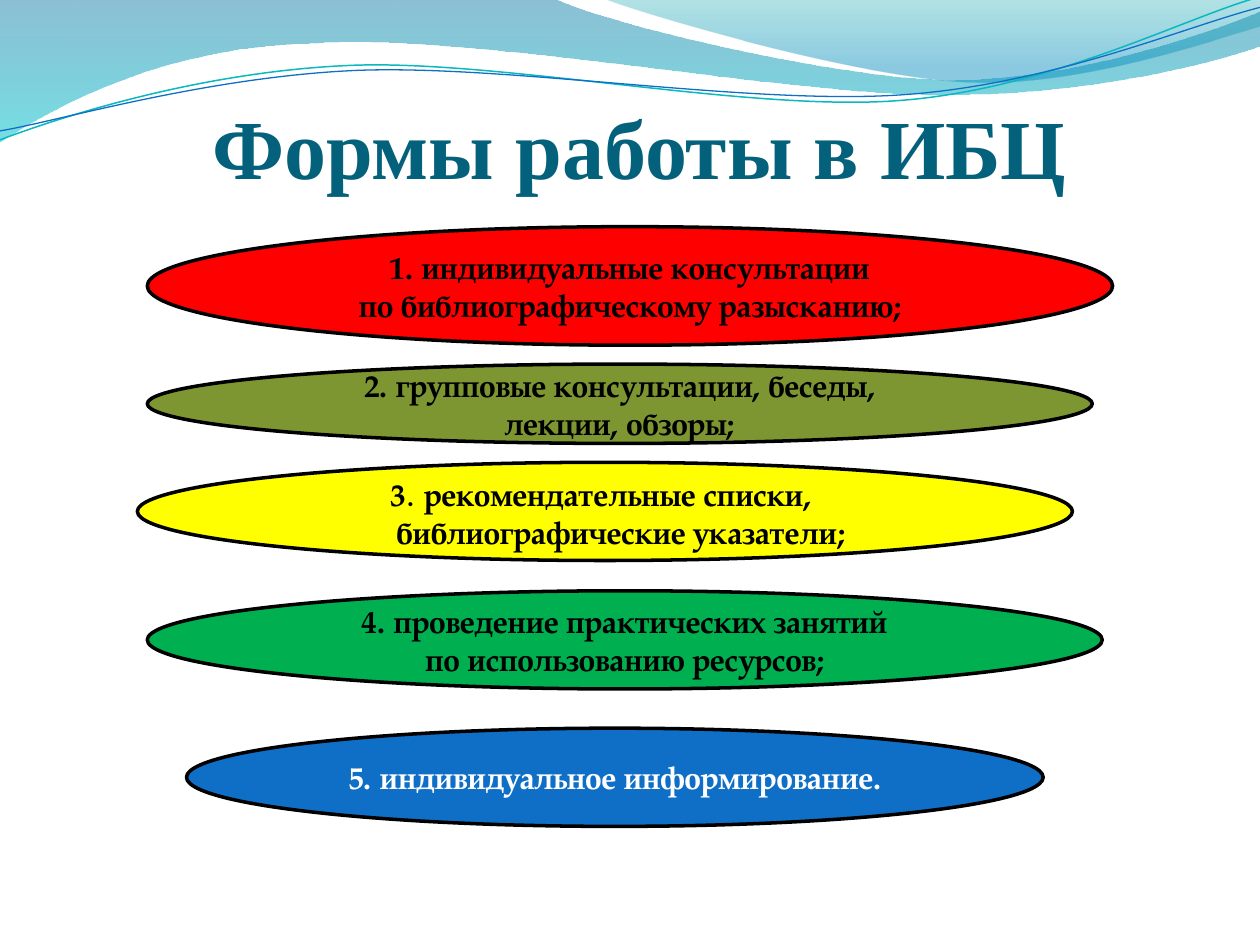
from pptx import Presentation
from pptx.dml.color import RGBColor
from pptx.enum.shapes import MSO_SHAPE
from pptx.enum.text import MSO_ANCHOR, MSO_AUTO_SIZE, PP_ALIGN
from pptx.util import Cm, Pt
from lxml.etree import SubElement
from pptx.oxml.ns import qn

HUE = {
    "title": "04617B", "black": "000000", "white": "FFFFFF",
    "red": "FF0000", "olive": "7E9632", "yellow": "FFFF00",
    "green": "00B050", "blue": "0F6FC6", "cyan": "0AB8BF",
    "deep": "0074A1", "aqua": "00C6CF", "teal": "00A1A9", "sky": "008BBF",
}
FONT = "TeX Gyre Pagella"

# Outlines in cm: a pair is a line end, six numbers are a Bezier curve.
BAND = [
    (0, 0), (11.18, -0.03),
    (12.09, 0.43, 16.87, 1.6, 19.25, 1.6),
    (21.67, 1.6, 24.33, 0.66, 25.4, 0.23),
    (25.43, 0.91),
    (24.97, 1.12, 22.1, 1.93, 18.95, 1.91),
    (15.8, 1.91, 9.7, 0.71, 6.53, 0.86),
    (3.28, 0.91, 1.17, 2.11, -0.03, 2.87),
    (0, 0),
]
CREST = [
    (12.17, -0.03),
    (12.93, 0.28, 17.32, 1.57, 19.53, 1.65),
    (21.74, 1.75, 24.41, 0.81, 25.4, 0.53),
    (25.4, 0), (12.17, -0.03),
]
CYAN_LINE = [
    (0, 2.82),
    (1.22, 2.36, 4.01, 1.45, 7.04, 1.32),
    (10.03, 1.19, 15.06, 2.26, 18.11, 2.03),
    (21.16, 1.8, 23.83, 0.38, 25.35, -0.05),
]
BLUE_LINE = [
    (0, 2.64),
    (1.19, 2.44, 4.17, 1.55, 7.19, 1.42),
    (10.24, 1.3, 15.16, 2.13, 18.21, 1.91),
    (21.23, 1.7, 23.9, 0.53, 25.4, 0.15),
]

# Box in cm, fill, text colour, lines
FORMS = [
    ((2.97, 4.57, 19.46, 2.39), "red", "black",
     "1. индивидуальные консультации\nпо библиографическому разысканию;"),
    ((2.97, 7.34, 19.05, 1.6), "olive", "black",
     "2. групповые консультации, беседы,\nлекции, обзоры;"),
    ((2.77, 9.32, 18.85, 1.98), "yellow", "black",
     "3\nбиблиографические указатели;"),
    ((2.97, 11.91, 19.25, 1.98), "green", "black",
     "4. проведение практических занятий\nпо использованию ресурсов;"),
    ((3.76, 14.68, 17.27, 1.98), "blue", "white",
     "5. индивидуальное информирование."),
]


def rgb(name):
    return RGBColor.from_string(HUE[name])


def add_path(slide, path, close):
    """Join the end points by lines, then bend those that are curves."""
    ends = [(Cm(part[-2]), Cm(part[-1])) for part in path]
    pen = slide.shapes.build_freeform(*ends[0])
    pen.add_line_segments(ends[1:], close=close)
    shape = pen.convert_to_shape()
    shape.shadow.inherit = False
    lines = list(shape.element.spPr.iter(qn("a:lnTo")))
    for line, part in zip(lines, path[1:]):
        if len(part) == 6:
            line.tag = qn("a:cubicBezTo")
            line.clear()
            for x, y in zip(part[::2], part[1::2]):
                knot = SubElement(line, qn("a:pt"))
                knot.set("x", str(Cm(x) - shape.left))
                knot.set("y", str(Cm(y) - shape.top))
    return shape


def add_wave(slide, path, stops):
    """Stops hold position, colour and opacity in percent."""
    wave = add_path(slide, path, True)
    wave.line.fill.background()
    wave.fill.gradient()
    wave.fill.gradient_angle = 270
    for stop, (pos, name, _) in zip(wave.fill.gradient_stops, stops):
        stop.position = pos
        stop.color.rgb = rgb(name)
    tints = wave.element.spPr.iter(qn("a:srgbClr"))
    for tint, (_, _, share) in zip(tints, stops):
        SubElement(tint, qn("a:alpha")).set("val", str(share * 1000))


def add_curve(slide, path, name, width):
    curve = add_path(slide, path, False)
    curve.fill.background()
    curve.line.color.rgb = rgb(name)
    curve.line.width = Pt(width)


def style(run, font, size, name, bold=True):
    run.font.name = font
    run.font.size = Pt(size)
    run.font.bold = bold
    run.font.color.rgb = rgb(name)


def set_title(slide, text):
    title = slide.shapes.title
    slide.shapes.element.append(title.element)  # in front of the waves
    title.left, title.top, title.width, title.height = map(
        Cm, (1.27, 0.58, 22.86, 3.38))
    frame = title.text_frame
    frame.text = text
    frame.auto_size = MSO_AUTO_SIZE.NONE
    frame.vertical_anchor = MSO_ANCHOR.BOTTOM
    frame.margin_left, frame.margin_right = Cm(0.38), 0
    frame.margin_top, frame.margin_bottom = Cm(0.13), 0
    para = frame.paragraphs[0]
    para.alignment = PP_ALIGN.CENTER
    style(para.runs[0], "Times New Roman", 48, "title")


def add_oval(slide, box, fill, ink, text):
    oval = slide.shapes.add_shape(MSO_SHAPE.OVAL, *map(Cm, box))
    oval.shadow.inherit = False
    oval.fill.solid()
    oval.fill.fore_color.rgb = rgb(fill)
    oval.line.color.rgb = rgb("black")
    oval.line.width = Pt(2)
    frame = oval.text_frame
    frame.word_wrap = True
    frame.vertical_anchor = MSO_ANCHOR.MIDDLE
    frame.text = text
    for para in frame.paragraphs:
        para.alignment = PP_ALIGN.CENTER
        style(para.runs[0], FONT, 18, ink)
    return oval


def finish_lists(oval):
    """Light, larger dot after the number; second line set to the right."""
    first, second = oval.text_frame.paragraphs
    for text, size, bold in ((". ", 20, False),
                             ("рекомендательные списки, ", 18, True)):
        run = first.add_run()
        run.text = text
        style(run, FONT, size, "black", bold)
    second._p.get_or_add_pPr().set("marL", str(Cm(0.64)))


def main():
    deck = Presentation()
    deck.slide_width, deck.slide_height = Cm(25.4), Cm(19.05)
    slide = deck.slides.add_slide(deck.slide_layouts[5])
    add_wave(slide, BAND, [(0, "deep", 45), (1, "aqua", 55)])
    add_wave(slide, CREST, [(0, "teal", 30), (0.8, "sky", 45)])
    add_curve(slide, CYAN_LINE, "cyan", 0.85)
    add_curve(slide, BLUE_LINE, "blue", 0.75)
    set_title(slide, "Формы работы в ИБЦ")
    ovals = [add_oval(slide, *form) for form in FORMS]
    finish_lists(ovals[2])
    deck.save("out.pptx")


if __name__ == "__main__":
    main()
